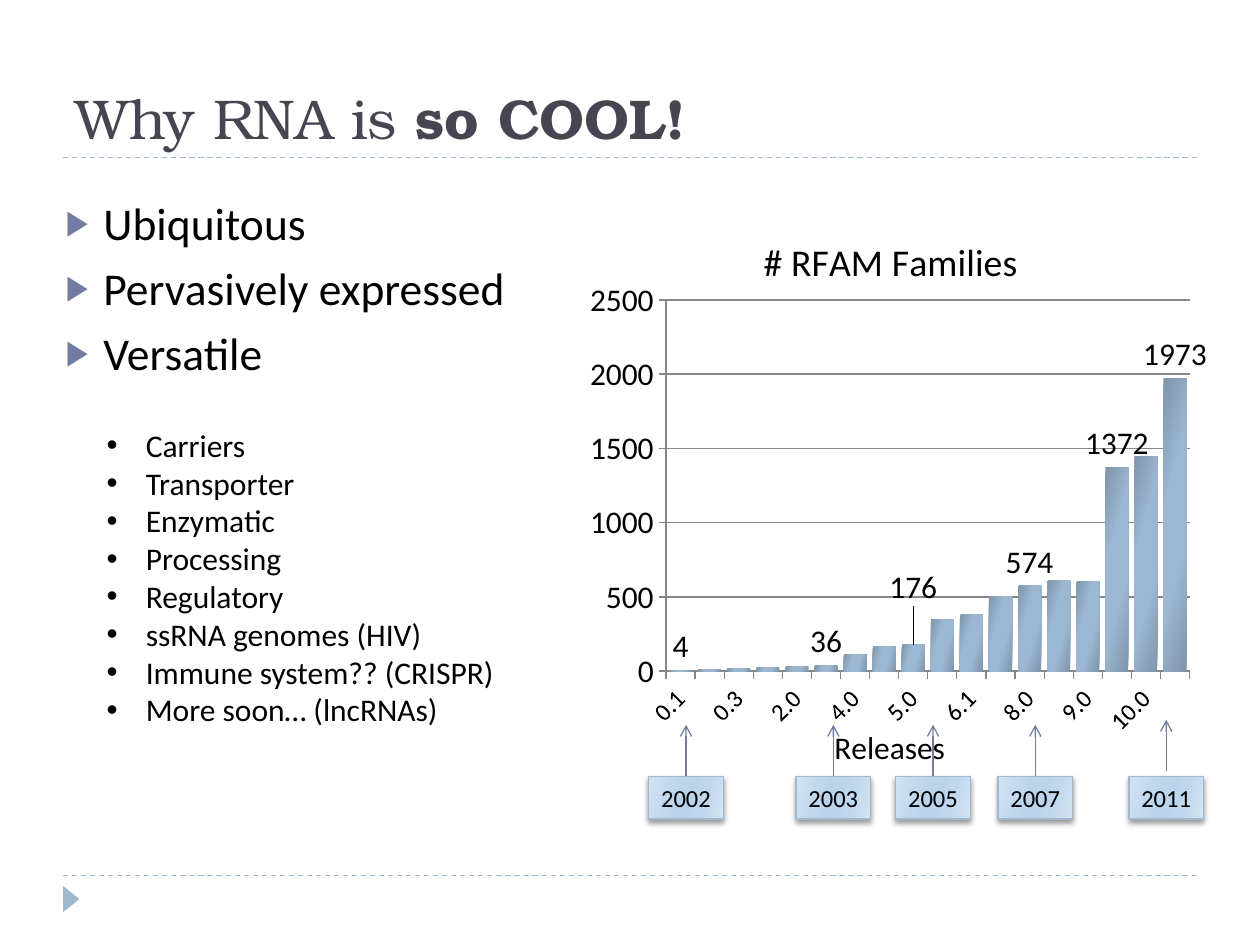
from dataclasses import dataclass

from lxml import etree
from pptx import Presentation
from pptx.chart.data import CategoryChartData
from pptx.dml.color import RGBColor
from pptx.enum import chart as ch, dml, shapes, text
from pptx.oxml import parse_xml
from pptx.oxml.ns import qn
from pptx.util import Cm, Pt

BLACK = RGBColor(0x00, 0x00, 0x00)
SLATE = RGBColor(0x46, 0x46, 0x53)
INDIGO = RGBColor(0x72, 0x7C, 0xA3)
STEEL = RGBColor(0x9F, 0xB8, 0xCD)
GREY = RGBColor(0x87, 0x87, 0x87)
BAR_LIGHT = RGBColor(0x9B, 0xB7, 0xD1)
BAR_DARK = RGBColor(0x7F, 0x95, 0xAB)
BOX_EDGE = RGBColor(0xD3, 0xE3, 0xF2)
BOX_SOFT = RGBColor(0xC0, 0xD8, 0xEE)
BOX_CORE = RGBColor(0xBA, 0xD4, 0xEC)
BOX_STOPS = [(0, BOX_EDGE), (30, BOX_SOFT), (45, BOX_CORE),
             (55, BOX_CORE), (73, BOX_SOFT), (100, BOX_EDGE)]
BAR_STOPS = [(0, BAR_DARK), (35, BAR_LIGHT), (65, BAR_LIGHT), (100, BAR_DARK)]
BODY_FONT = "Calibri"
TITLE_FONT = "TeX Gyre Bonum"


@dataclass
class Year:
    label: str
    left: float
    lift: float = 0  # gap between the box and the start of its arrow, cm


@dataclass
class Bullet:
    char: str
    indent: float
    color: RGBColor
    percent: int = 100


YEARS = [Year("2002", 13.08), Year("2003", 16.05), Year("2005", 18.06),
         Year("2007", 20.12), Year("2011", 22.76, 0.1)]
BOX_TOP, BOX_WIDTH, BOX_HEIGHT, ARROW_LENGTH = 15.65, 1.5, 0.86, 1.04
RELEASES = {"0.1": 4, "0.2": 12, "0.3": 21, "1.0": 25, "2.0": 30, "3.0": 36,
            "4.0": 114, "4.1": 165, "5.0": 176, "6.0": 350, "6.1": 379,
            "7.0": 503, "8.0": 574, "8.1": 607, "9.0": 603, "9.1": 1372,
            "10.0": 1446, "10.1": 1973}
LABELLED = ("0.1", "3.0", "5.0", "8.0", "9.1", "10.1")
RAISED = "5.0"


def add(parent, tag: str, **attributes):
    return etree.SubElement(parent, qn(tag), attributes)


def style(font, size: float, color: RGBColor = BLACK, name: str = BODY_FONT) -> None:
    font.size, font.name, font.bold = Pt(size), name, False
    font.color.rgb = color


def paint_gradient(fill, owner, stops, angle: float) -> None:
    fill.gradient()
    fill.gradient_angle = 360 - angle
    stop_list = owner.find(".//" + qn("a:gsLst"))
    for old in list(stop_list):
        stop_list.remove(old)
    for position, color in stops:
        stop = add(stop_list, "a:gs", pos=str(position * 1000))
        add(stop, "a:srgbClr", val=str(color))


def add_line(slide, x1: float, y1: float, x2: float, y2: float, color: RGBColor):
    line = slide.shapes.add_connector(
        shapes.MSO_CONNECTOR.STRAIGHT, Cm(x1), Cm(y1), Cm(x2), Cm(y2))
    line.line.color.rgb, line.line.width = color, Pt(0.75)
    add(line._element.spPr, "a:effectLst")
    return line


def fill_list(frame, items, bullet: Bullet, size: float, gap: float) -> None:
    frame.text = "\n".join(items)
    for number, paragraph in enumerate(frame.paragraphs):
        properties = paragraph._p.get_or_add_pPr()
        properties.set("marL", str(Cm(bullet.indent)))
        properties.set("indent", str(-Cm(bullet.indent)))
        add(add(properties, "a:buClr"), "a:srgbClr", val=str(bullet.color))
        add(properties, "a:buSzPct", val=str(bullet.percent * 1000))
        add(properties, "a:buFont", typeface="Arial")
        add(properties, "a:buChar", char=bullet.char)
        paragraph.space_before = Pt(gap if number else 0)
        for run in paragraph.runs:
            style(run.font, size)


def add_year(slide, year: Year) -> None:
    box = slide.shapes.add_shape(shapes.MSO_SHAPE.RECTANGLE, Cm(year.left),
                                 Cm(BOX_TOP), Cm(BOX_WIDTH), Cm(BOX_HEIGHT))
    paint_gradient(box.fill, box._element.spPr, BOX_STOPS, 16)
    box.line.color.rgb, box.line.width = STEEL, Pt(0.75)
    box.shadow.inherit = False
    effects = box._element.spPr.find(qn("a:effectLst"))
    shadow = add(effects, "a:outerShdw", blurRad=str(Pt(3)), dist=str(Pt(2)),
                 dir="5400000", rotWithShape="0")
    add(add(shadow, "a:srgbClr", val=str(BLACK)), "a:alpha", val="40000")
    frame = box.text_frame
    frame.text, frame.word_wrap = year.label, False
    frame.vertical_anchor = text.MSO_ANCHOR.MIDDLE
    frame.paragraphs[0].alignment = text.PP_ALIGN.CENTER
    style(frame.paragraphs[0].runs[0].font, 14)

    center, start = year.left + BOX_WIDTH / 2, BOX_TOP - year.lift
    arrow = add_line(slide, center, start, center, start - ARROW_LENGTH, INDIGO)
    if not year.lift:
        arrow.begin_connect(box, 0)
    add(arrow.line._get_or_add_ln(), "a:tailEnd", type="arrow")


def add_families_chart(slide) -> None:
    data = CategoryChartData()
    data.categories = list(RELEASES)
    data.add_series("Series 1", list(RELEASES.values()))
    chart = slide.shapes.add_chart(ch.XL_CHART_TYPE.COLUMN_CLUSTERED, Cm(11.63),
                                   Cm(4.24), Cm(12.7), Cm(11.43), data).chart
    style(chart.font, 18)
    chart.has_legend = False
    chart.has_title = True
    chart.chart_title.text_frame.text = "# RFAM Families"
    style(chart.chart_title.text_frame.paragraphs[0].runs[0].font, 21.6)
    chart.chart_title.include_in_layout = False

    # Axes
    category, value = chart.category_axis, chart.value_axis
    for axis, size in ((category, 14), (value, 18)):
        axis.major_tick_mark = ch.XL_TICK_MARK.OUTSIDE
        axis.format.line.color.rgb = GREY
        style(axis.tick_labels.font, size)
    value.minimum_scale, value.maximum_scale, value.major_unit = 0, 2500, 500
    value.major_gridlines.format.line.color.rgb = GREY
    category.axis_title.text_frame.text = "Releases"
    style(category.axis_title.text_frame.paragraphs[0].runs[0].font, 18)
    category._element.find(qn("c:txPr")).find(qn("a:bodyPr")).set("rot", "-2700000")
    skip = etree.Element(qn("c:tickLblSkip"), val="2")
    category._element.find(qn("c:noMultiLvlLbl")).addprevious(skip)

    # Columns and the labels of selected releases
    plot = chart.plots[0]
    plot.gap_width, plot.overlap, plot.vary_by_categories = 26, -26, False
    series = plot.series[0]
    paint_gradient(series.format.fill, series._element, BAR_STOPS, 16)
    series.data_labels.show_value = False
    for number, release in enumerate(RELEASES):
        if release in LABELLED:
            label = series.points[number].data_label
            label.position = ch.XL_LABEL_POSITION.OUTSIDE_END
            if release == RAISED:
                element = series._element.find(
                    f".//{qn('c:dLbl')}/{qn('c:idx')}[@val='{number}']").getparent()
                element.insert(1, manual_layout(x=0, y=-0.06))

    area = chart._chartSpace.chart.plotArea
    for old in area.findall(qn("c:layout")):
        area.remove(old)
    area.insert(0, manual_layout(layoutTarget="inner", xMode="edge", yMode="edge",
                                 x=0.142, y=0.158, w=0.834, h=0.655))


def manual_layout(**settings):
    layout = parse_xml('<c:layout xmlns:c="http://schemas.openxmlformats.org/'
                       'drawingml/2006/chart"/>')
    manual = add(layout, "c:manualLayout")
    for name, setting in settings.items():
        add(manual, f"c:{name}", val=str(setting))
    return layout


def place(shape, left: float, top: float, width: float, height: float) -> None:
    shape.left, shape.top = Cm(left), Cm(top)
    shape.width, shape.height = Cm(width), Cm(height)


def main() -> None:
    deck = Presentation()
    deck.slide_width, deck.slide_height = Cm(25.4), Cm(19.05)
    slide = deck.slides.add_slide(deck.slide_layouts[1])

    # Dashed rules and corner marker
    for y in (17.65, 3.18):
        rule = add_line(slide, 1.27, y, 24.13, y, STEEL)
        rule.line.dash_style = dml.MSO_LINE.DASH
    marker = slide.shapes.add_shape(shapes.MSO_SHAPE.ISOSCELES_TRIANGLE,
                                    Cm(1.17), Cm(17.96), Cm(0.53), Cm(0.33))
    marker.rotation = 90
    marker.fill.solid()
    marker.fill.fore_color.rgb = STEEL
    marker.line.fill.background()
    marker.shadow.inherit = False

    # Title
    title = slide.shapes.title
    place(title, 1.27, 0.43, 22.86, 2.74)
    title.text_frame.vertical_anchor = text.MSO_ANCHOR.BOTTOM
    title.text_frame.auto_size = text.MSO_AUTO_SIZE.NONE
    heading = title.text_frame.paragraphs[0]
    heading.alignment = text.PP_ALIGN.LEFT
    for words, bold in (("Why RNA is ", False), ("so COOL!", True)):
        run = heading.add_run()
        run.text = words
        style(run.font, 32, SLATE, TITLE_FONT)
        run.font.bold = bold

    # Properties of RNA and its roles
    body = slide.placeholders[1]
    place(body, 1.07, 3.81, 11.63, 13.54)
    body.text_frame.auto_size = text.MSO_AUTO_SIZE.NONE
    fill_list(body.text_frame, ["Ubiquitous", "Pervasively expressed", "Versatile"],
              Bullet("▶", 0.76, INDIGO, 76), 26, 6)
    add_families_chart(slide)
    for year in YEARS:
        add_year(slide, year)
    roles = slide.shapes.add_textbox(Cm(1.9), Cm(8.46), Cm(8.46), Cm(6.4)).text_frame
    roles.word_wrap = True
    fill_list(roles, ["Carriers", "Transporter", "Enzymatic", "Processing",
                      "Regulatory", "ssRNA genomes (HIV)", "Immune system?? (CRISPR)",
                      "More soon… (lncRNAs)"], Bullet("•", 0.79, BLACK), 18, 0)

    deck.save("out.pptx")


if __name__ == "__main__":
    main()
